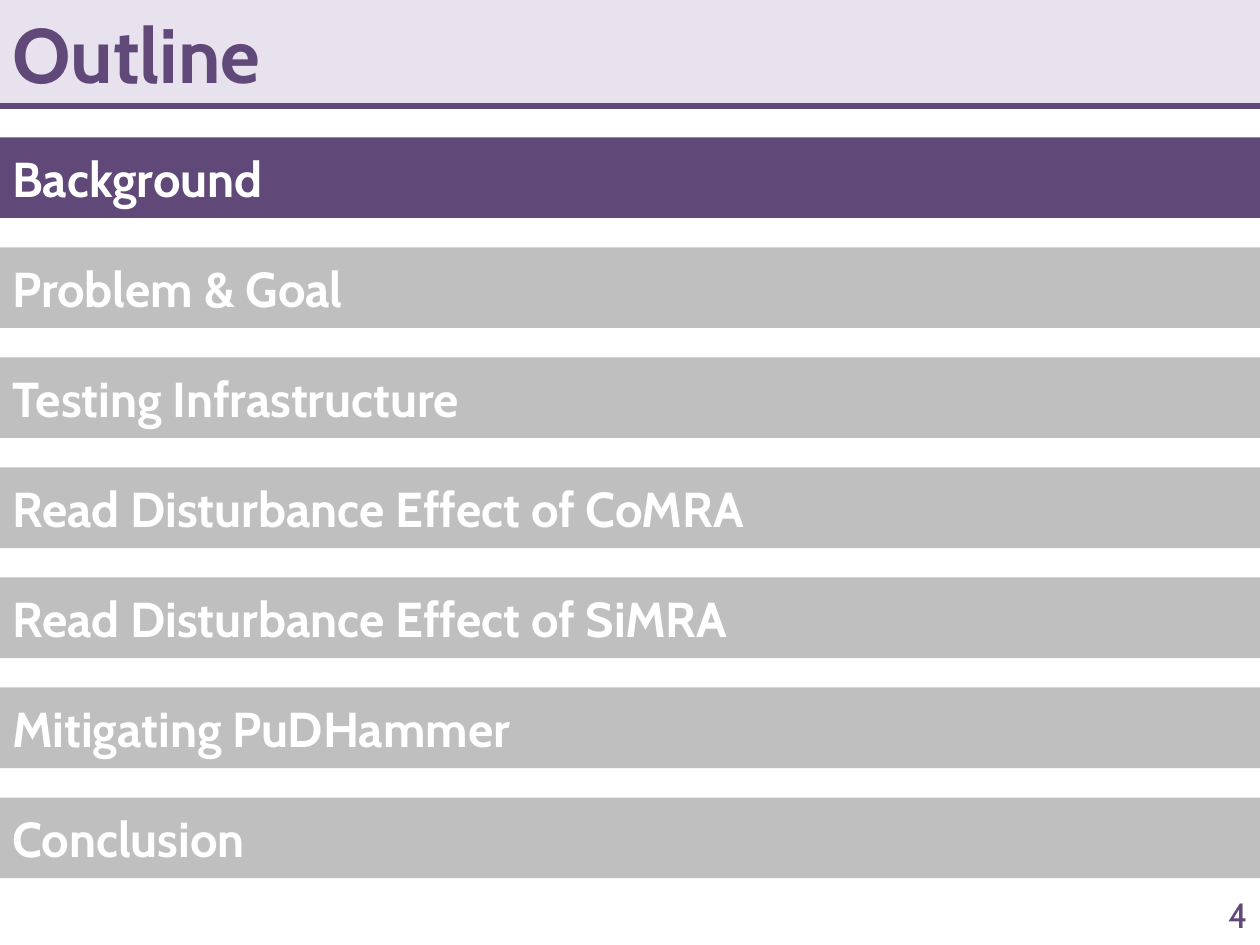
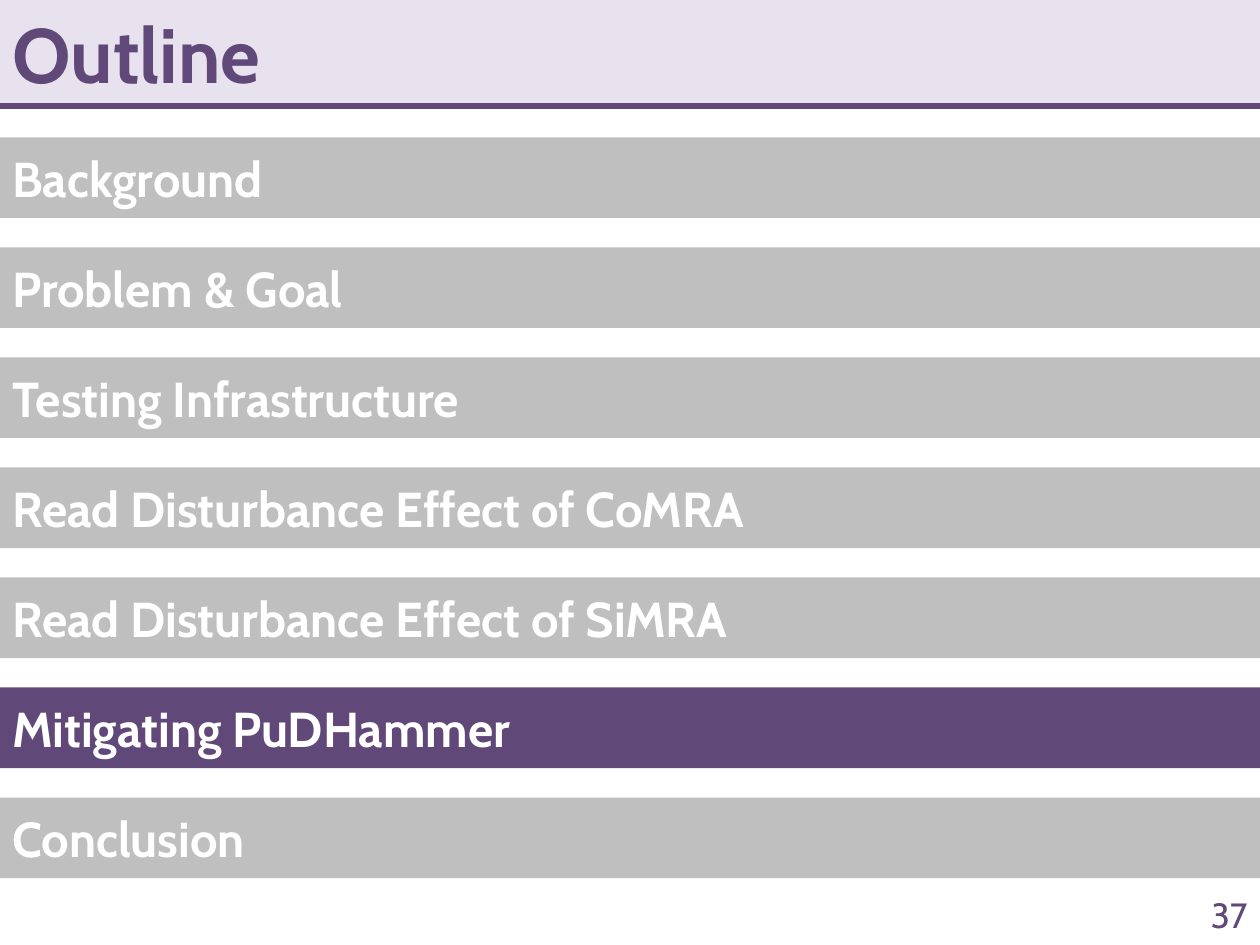
import pptx
import pptx.dml.color
import pptx.enum.shapes
import pptx.enum.text
import pptx.util
from lxml import etree

Inches = pptx.util.Inches
Pt = pptx.util.Pt
ALIGN = pptx.enum.text.PP_ALIGN
RECTANGLE = pptx.enum.shapes.MSO_SHAPE.RECTANGLE

PURPLE = "604878"
LAVENDER = "E8E2EE"
GREY = "BFBFBF"
WHITE = "FFFFFF"

SLIDE_WIDTH = 10
HEADER_HEIGHT = 0.84
FIRST_TOP = 1.09
LAST_TOP = 6.33
BAR_HEIGHT = 0.64

SECTIONS = [
    "Background",
    "Problem & Goal",
    "Testing Infrastructure",
    "Read Disturbance Effect of CoMRA",
    "Read Disturbance Effect of SiMRA",
    "Mitigating PuDHammer",
    "Conclusion",
]
OUTLINES = [("4", "Background"), ("37", "Mitigating PuDHammer")]


def write_text(shape, text, size, color, bold=True, align=ALIGN.LEFT):
    text_frame = shape.text_frame
    text_frame.text = text
    text_frame.word_wrap = True
    text_frame.auto_size = pptx.enum.text.MSO_AUTO_SIZE.NONE
    text_frame.vertical_anchor = pptx.enum.text.MSO_ANCHOR.MIDDLE
    paragraph = text_frame.paragraphs[0]
    paragraph.alignment = align
    font = paragraph.runs[0].font
    font.name = "Cabin"
    font.size = Pt(size)
    font.bold = bold
    font.color.rgb = pptx.dml.color.RGBColor.from_string(color)


def add_bar(slide, top, height, color):
    bar = slide.shapes.add_shape(
        RECTANGLE, 0, Inches(top), Inches(SLIDE_WIDTH), Inches(height))
    bar.shadow.inherit = False
    bar.fill.solid()
    bar.fill.fore_color.rgb = pptx.dml.color.RGBColor.from_string(color)
    bar.line.fill.background()
    return bar


presentation = pptx.Presentation()
presentation.slide_width = Inches(SLIDE_WIDTH)
presentation.slide_height = Inches(7.5)
title_only = presentation.slide_layouts.get_by_name("Title Only")
pitch = (LAST_TOP - FIRST_TOP) / (len(SECTIONS) - 1)

for page_number, current_section in OUTLINES:
    slide = presentation.slides.add_slide(title_only)

    title = slide.shapes.title
    title.left, title.top = 0, 0
    title.width, title.height = Inches(SLIDE_WIDTH), Inches(HEADER_HEIGHT)
    write_text(title, "Outline", 44, PURPLE)
    title.text_frame.paragraphs[0].space_after = Pt(6)

    header = add_bar(slide, 0, HEADER_HEIGHT, LAVENDER)
    title.element.addprevious(header.element)

    rule = slide.shapes.add_connector(
        pptx.enum.shapes.MSO_CONNECTOR.STRAIGHT,
        0, Inches(HEADER_HEIGHT), Inches(SLIDE_WIDTH), Inches(HEADER_HEIGHT))
    rule.line.color.rgb = pptx.dml.color.RGBColor.from_string(PURPLE)
    rule.line.width = Pt(3.5)
    etree.SubElement(
        rule.element.spPr,
        "{http://schemas.openxmlformats.org/drawingml/2006/main}effectLst")

    number_box = slide.shapes.add_textbox(
        Inches(8.92), Inches(7.06), Inches(1.08), Inches(0.4))
    write_text(number_box, page_number, 20, PURPLE, False, ALIGN.RIGHT)

    for index, section in enumerate(SECTIONS):
        color = PURPLE if section == current_section else GREY
        bar = add_bar(slide, FIRST_TOP + index * pitch, BAR_HEIGHT, color)
        write_text(bar, section, 28, WHITE)

presentation.save("out.pptx")
